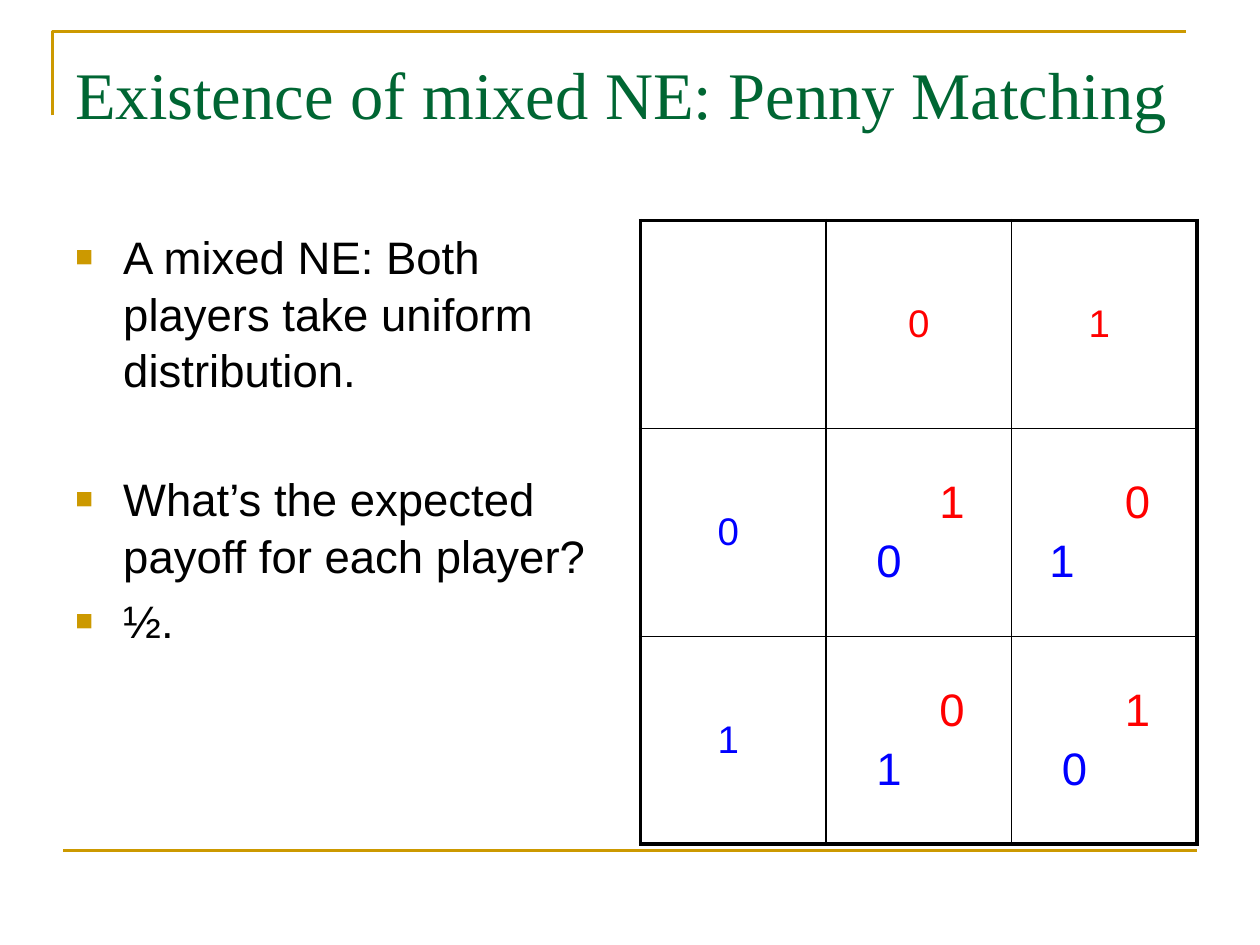
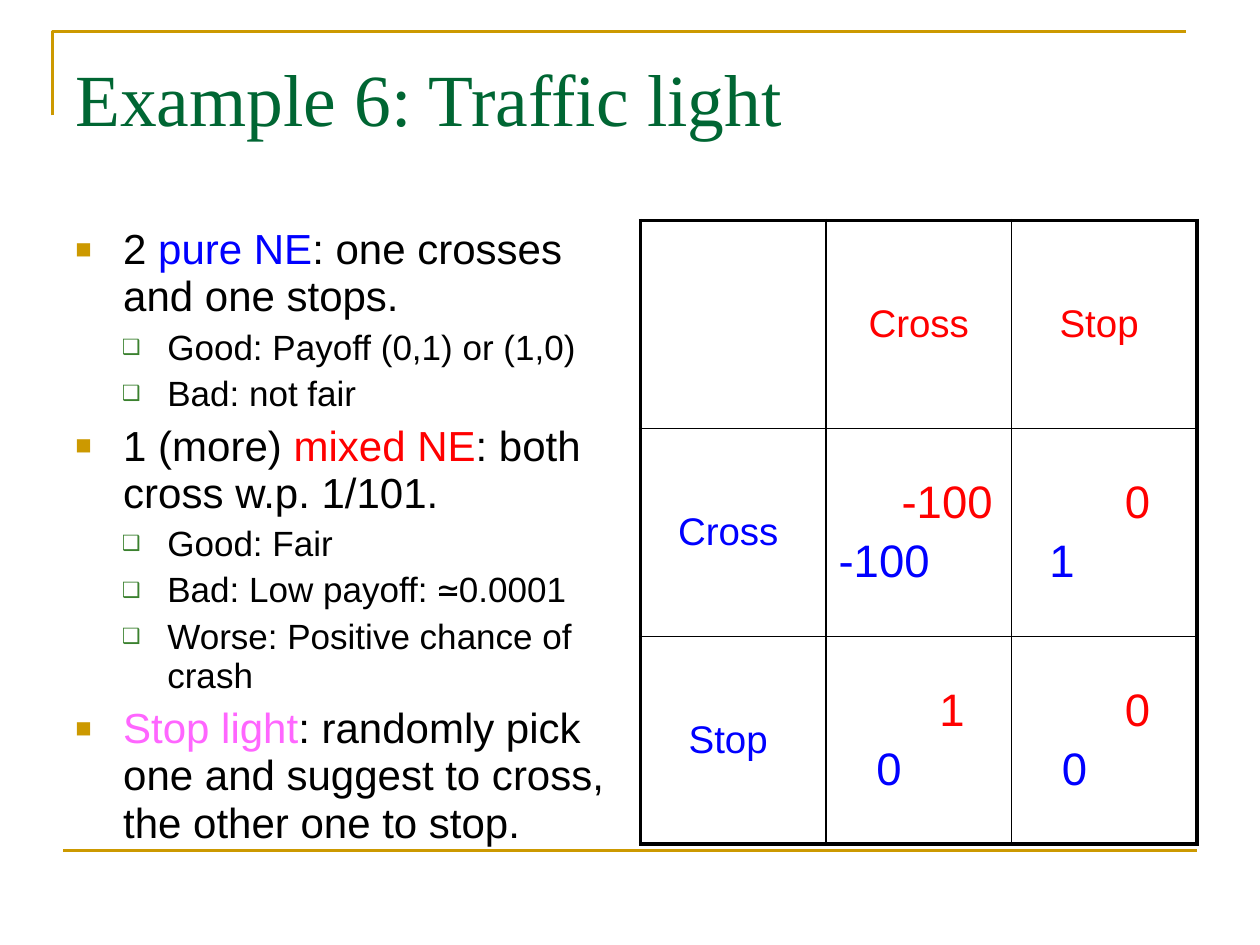
from lxml.etree import SubElement
from pptx import Presentation
from pptx.dml.color import RGBColor
from pptx.enum.text import MSO_ANCHOR, PP_ALIGN
from pptx.oxml.ns import qn
from pptx.util import Inches, Pt

BLACK = RGBColor(0x00, 0x00, 0x00)
GOLD = RGBColor(0xCC, 0x99, 0x00)
GREEN = RGBColor(0x00, 0x66, 0x33)
LEAF = RGBColor(0x3B, 0x81, 0x2F)
RED = RGBColor(0xFF, 0x00, 0x00)
BLUE = RGBColor(0x00, 0x00, 0xFF)
PINK = RGBColor(0xFF, 0x66, 0xFF)

SLIDE_WIDTH, SLIDE_HEIGHT = Inches(10), Inches(7.5)
GRID_COLUMNS, GRID_ROWS = 120, 90
BODY_TOP, BODY_HEIGHT, BODY_WIDTH = 21, 59.4, 53
TEXT_LEFT, TABLE_LEFT = 6, 61
SPACE_WIDTH = Inches(0.1)

BULLETS = [("■", GOLD, 65, 0.38, 0.38), ("❑", LEAF, 60, 0.73, 0.36)]


def across(columns):
    return round(SLIDE_WIDTH * columns / GRID_COLUMNS)


def down(rows):
    return round(SLIDE_HEIGHT * rows / GRID_ROWS)


class Deck:
    title_font = "Times New Roman"
    text_font = "Arial"
    header_size = 22
    payoff_size = 26

    def __init__(self):
        self.presentation = Presentation()
        self.presentation.slide_width = SLIDE_WIDTH
        self.presentation.slide_height = SLIDE_HEIGHT
        self.slide = None

    def add_slide(self, title, title_size):
        self.slide = self.presentation.slides.add_slide(self.presentation.slide_layouts[6])
        self.add_corner()
        self.add_footer_line()
        self.add_title(title, title_size)

    def add_corner(self):
        builder = self.slide.shapes.build_freeform(across(5), down(11))
        builder.add_line_segments([(across(5), down(3)), (across(113), down(3))], close=False)
        shape = builder.convert_to_shape()
        shape.shadow.inherit = False
        shape.fill.background()
        self.style_line(shape.line)

    def add_footer_line(self):
        connector = self.slide.shapes.add_connector(1, across(6), down(81), across(114), down(81))
        self.style_line(connector.line)
        SubElement(connector.element.spPr, qn("a:effectLst"))

    def style_line(self, line):
        line.color.rgb = GOLD
        line.width = Pt(1.5)

    def add_text_frame(self, top, width, height):
        shape = self.slide.shapes.add_textbox(across(TEXT_LEFT), down(top), across(width), down(height))
        shape.text_frame.word_wrap = True
        return shape.text_frame

    def add_title(self, title, size):
        text_frame = self.add_text_frame(3.6, 108, 15)
        text_frame.margin_top = Inches(0.12)
        text_frame.text = title
        self.style_run(text_frame.paragraphs[0].runs[0], size, GREEN, self.title_font)

    def style_run(self, run, size, color=BLACK, font=text_font):
        run.font.size = Pt(size)
        run.font.color.rgb = color
        run.font.name = font

    def add_bullets(self, items, sizes, line_spacing):
        text_frame = self.add_text_frame(BODY_TOP, BODY_WIDTH, BODY_HEIGHT)
        for index, (level, gap, parts) in enumerate(items):
            paragraph = text_frame.add_paragraph() if index else text_frame.paragraphs[0]
            size = sizes[level]
            paragraph.level = level
            paragraph.line_spacing = line_spacing
            paragraph.space_before = Pt(gap or round(size * 0.2))
            self.style_bullet(paragraph, *BULLETS[level])
            for text, *style in parts:
                run = paragraph.add_run()
                run.text = text
                self.style_run(run, size, *style)

    def style_bullet(self, paragraph, character, color, percent, left, hanging):
        properties = paragraph._p.get_or_add_pPr()
        properties.set("marL", str(Inches(left)))
        properties.set("indent", str(-Inches(hanging)))
        bullet_color = SubElement(properties, qn("a:buClr"))
        SubElement(bullet_color, qn("a:srgbClr"), val=str(color))
        SubElement(properties, qn("a:buSzPct"), val=str(percent * 1000))
        SubElement(properties, qn("a:buFont"), typeface=self.text_font)
        SubElement(properties, qn("a:buChar"), char=character)

    def add_game(self, actions, payoffs):
        count = len(actions) + 1
        frame = self.slide.shapes.add_table(count, count, across(TABLE_LEFT), down(BODY_TOP),
                                            across(BODY_WIDTH), down(BODY_HEIGHT))
        table = frame.table
        table.first_row = table.horz_banding = False
        for row in range(count):
            for column in range(count):
                cell = table.cell(row, column)
                cell.vertical_anchor = MSO_ANCHOR.MIDDLE
                if row and column:
                    self.fill_payoff(cell, payoffs[row - 1][column - 1])
                elif row or column:
                    self.fill_header(cell, actions[max(row, column) - 1], BLUE if row else RED)
                    cell.margin_right = Inches(0.1 if column == 1 else 0.18)
                self.draw_borders(cell, row, column, count - 1)
                cell.fill.background()

    def fill_header(self, cell, action, color):
        cell.text_frame.text = action
        paragraph = cell.text_frame.paragraphs[0]
        paragraph.alignment = PP_ALIGN.CENTER
        self.style_run(paragraph.runs[0], self.header_size, color)

    def fill_payoff(self, cell, payoff):
        cell.text_frame.text = "\n".join(text for text, indent in payoff)
        for paragraph, (text, indent), color in zip(cell.text_frame.paragraphs, payoff, (RED, BLUE)):
            paragraph.space_before = Pt(5)
            paragraph._p.get_or_add_pPr().set("marL", str(indent * SPACE_WIDTH))
            self.style_run(paragraph.runs[0], self.payoff_size, color)

    def draw_borders(self, cell, row, column, last):
        outer_sides = {"L": column == 0, "R": column == last, "T": row == 0, "B": row == last}
        for side, outer in outer_sides.items():
            border = SubElement(cell._tc.get_or_add_tcPr(), qn(f"a:ln{side}"),
                                w=str(Pt(2.25 if outer else 1)))
            fill = SubElement(border, qn("a:solidFill"))
            SubElement(fill, qn("a:srgbClr"), val=str(BLACK))


def payoff(column_player, row_player, row_indent=3):
    return (column_player, 8 if len(column_player) == 1 else 5), (row_player, row_indent)


def add_penny_matching(deck):
    deck.add_slide("Existence of mixed NE: Penny Matching", 38)
    deck.add_bullets([
        (0, None, [("A mixed NE: Both players take uniform distribution.",)]),
        (0, 41, [("What’s the expected payoff for each player?",)]),
        (0, None, [("½.",)]),
    ], sizes=(26,), line_spacing=1.04)
    deck.add_game(("0", "1"), [
        [payoff("1", "0"), payoff("0", "1", 2)],
        [payoff("0", "1"), payoff("1", "0")],
    ])


def add_traffic_light(deck):
    deck.add_slide("Example 6: Traffic light", 42)
    deck.add_bullets([
        (0, None, [("2 ",), ("pure NE", BLUE), (": one crosses and one stops.",)]),
        (1, None, [("Good: Payoff (0,1) or (1,0)",)]),
        (1, None, [("Bad: not fair",)]),
        (0, None, [("1 (more) ",), ("mixed NE", RED), (": both cross w.p. 1/101.",)]),
        (1, None, [("Good: Fair",)]),
        (1, None, [("Bad: Low payoff: ",), ("≃", BLACK, "Courier New"), ("0.0001",)]),
        (1, None, [("Worse: Positive chance of crash",)]),
        (0, None, [("Stop light", PINK),
                   (": randomly pick one and suggest to cross, the other one to stop.",)]),
    ], sizes=(24, 20), line_spacing=0.94)
    deck.add_game(("Cross", "Stop"), [
        [payoff("-100", "-100", 0), payoff("0", "1", 2)],
        [payoff("1", "0"), payoff("0", "0")],
    ])


def main():
    deck = Deck()
    add_penny_matching(deck)
    add_traffic_light(deck)
    deck.presentation.save("out.pptx")


if __name__ == "__main__":
    main()
